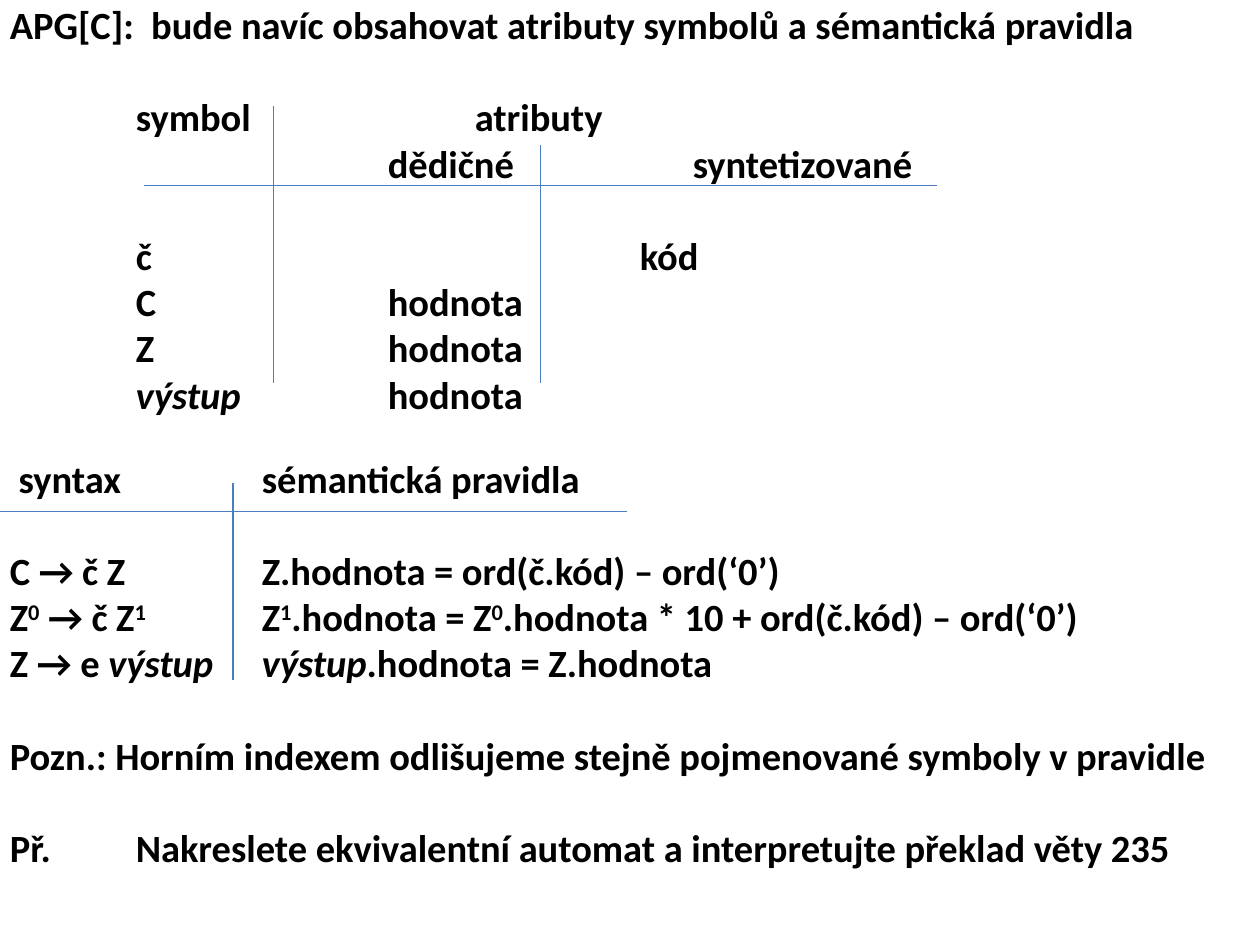
import pptx
import pptx.dml.color
import pptx.enum.shapes
import pptx.enum.text
import pptx.oxml.ns
import pptx.util
from lxml import etree

Inches = pptx.util.Inches
Pt = pptx.util.Pt
BLACK = pptx.dml.color.RGBColor(0x00, 0x00, 0x00)
BLUE = pptx.dml.color.RGBColor(0x4B, 0x7E, 0xBC)
qn = pptx.oxml.ns.qn


class Sheet:
    font_name = "Calibri"
    font_size = Pt(22)
    blank_line = 26.4
    line_width = Pt(0.75)

    def __init__(self, page):
        self.page = page

    def rule(self, left, top, right, bottom):
        line = self.page.shapes.add_connector(
            pptx.enum.shapes.MSO_CONNECTOR.STRAIGHT,
            Inches(left), Inches(top), Inches(right), Inches(bottom))
        line.line.color.rgb = BLUE
        line.line.width = self.line_width
        etree.SubElement(line._element.spPr, qn("a:effectLst"))

    def text(self, left, top, width, height, rows):
        box = self.page.shapes.add_textbox(
            Inches(left), Inches(top), Inches(width), Inches(height))
        frame = box.text_frame
        frame.word_wrap = True
        frame.auto_size = pptx.enum.text.MSO_AUTO_SIZE.SHAPE_TO_FIT_TEXT
        for index, (gap, stops, spans) in enumerate(rows):
            para = frame.paragraphs[0] if index == 0 else frame.add_paragraph()
            para.space_before = Pt(gap * self.blank_line)
            self.tabs(para, stops)
            for content, style in spans:
                self.span(para, content, style)

    def tabs(self, para, stops):
        if stops:
            tab_list = etree.SubElement(para._p.get_or_add_pPr(), qn("a:tabLst"))
            for stop in stops:
                etree.SubElement(tab_list, qn("a:tab"), pos=str(Inches(stop)), algn="l")

    def span(self, para, content, style):
        span = para.add_run()
        span.text = content
        span.font.name = self.font_name
        span.font.size = self.font_size
        span.font.bold = True
        span.font.color.rgb = BLACK
        if style == "italic":
            span.font.italic = True
        if style == "super":
            span._r.get_or_add_rPr().set("baseline", "30000")


def plain(content):
    return [(content, "")]


SYMBOL_STOPS = [1, 3, 5]
RULE_STOPS = [2]

ROWS = [
    (0, [], plain("APG[C]:  bude navíc obsahovat atributy symbolů a sémantická pravidla")),
    (1, [1, 3.69], plain("\tsymbol\tatributy")),
    (0, [3, 5.42], plain("\tdědičné\tsyntetizované")),
    (1, [1, 5], plain("\tč\tkód")),
    (0, SYMBOL_STOPS, plain("\tC\thodnota")),
    (0, SYMBOL_STOPS, plain("\tZ\thodnota")),
    (0, SYMBOL_STOPS, [("\tvýstup", "italic"), ("\thodnota", "")]),
    (0.82, [0.07, 2], plain("\tsyntax\tsémantická pravidla")),
    (1, RULE_STOPS, plain("C → č Z\tZ.hodnota = ord(č.kód) – ord(‘0’)")),
    (0, RULE_STOPS, [
        ("Z", ""), ("0", "super"), (" → č Z", ""), ("1", "super"),
        ("\tZ", ""), ("1", "super"), (".hodnota = Z", ""), ("0", "super"),
        (".hodnota * 10 + ord(č.kód) – ord(‘0’)", "")]),
    (0, RULE_STOPS, [
        ("Z → e ", ""), ("výstup\tvýstup", "italic"), (".hodnota = Z.hodnota", "")]),
    (1, [], plain("Pozn.: Horním indexem odlišujeme stejně pojmenované symboly v pravidle")),
    (1, [1], plain("Př.\tNakreslete ekvivalentní automat a interpretujte překlad věty 235")),
]

RULES = [
    (1.14, 1.47, 7.44, 1.47),
    (2.17, 0.84, 2.17, 3.04),
    (4.29, 1.15, 4.29, 3.04),
    (1.85, 3.83, 1.85, 5.4),
    (-0.02, 4.06, 4.98, 4.06),
]


def main():
    deck = pptx.Presentation()
    deck.slide_width = Inches(10)
    deck.slide_height = Inches(7.5)
    sheet = Sheet(deck.slides.add_slide(deck.slide_layouts[6]))
    sheet.text(-0.02, -0.04, 10, 7.07, ROWS)
    for ends in RULES:
        sheet.rule(*ends)
    deck.save("out.pptx")


if __name__ == "__main__":
    main()
